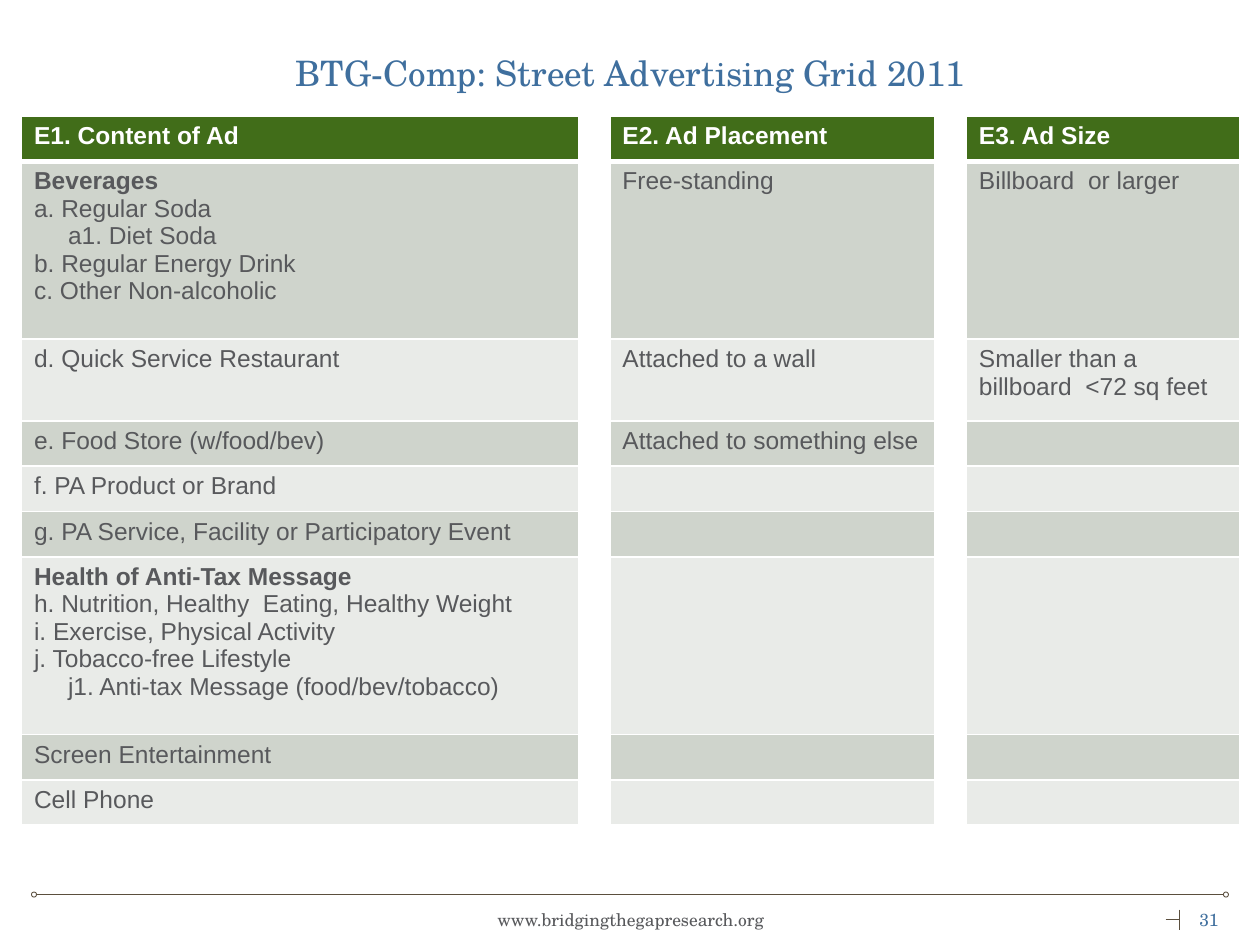
from lxml import etree
from pptx import Presentation, util as u
from pptx.dml.color import RGBColor
from pptx.enum import shapes, text
from pptx.oxml.ns import qn

SERIF, SANS = "TeX Gyre Schola", "Arial"
BLUE, GREY, BROWN, WHITE = "3F6F9E", "58595C", "5B4F3E", "FFFFFF"
HEADER_FILL, BANDS = "416D19", ("CFD4CC", "E9EBE8")
BOLD, INDENT = "bold", "indent"

TITLE = "BTG-Comp: Street Advertising Grid 2011"
SITE, PAGE = "www.bridgingthegapresearch.org", "31"

# Each column: width and its cells from the top; a cell is a list of lines,
# and a line is plain text or (text, style).
COLUMNS = [
    (4.42, [
        ["E1. Content of Ad"],
        [("Beverages", BOLD), "a. Regular Soda", ("a1. Diet Soda", INDENT),
         "b. Regular Energy Drink", "c. Other Non-alcoholic"],
        ["d. Quick Service Restaurant"],
        ["e. Food Store (w/food/bev)"],
        ["f. PA Product or Brand"],
        ["g. PA Service, Facility or Participatory Event"],
        [("Health of Anti-Tax Message", BOLD),
         "h. Nutrition, Healthy  Eating, Healthy Weight",
         "i. Exercise, Physical Activity", "j. Tobacco-free Lifestyle",
         ("j1. Anti-tax Message (food/bev/tobacco)", INDENT)],
        ["Screen Entertainment"],
        ["Cell Phone"],
    ]),
    (0.25, []),
    (2.58, [["E2. Ad Placement"], ["Free-standing"], ["Attached to a wall"],
            ["Attached to something else"]]),
    (0.25, []),
    (2.17, [["E3. Ad Size"], ["Billboard  or larger"],
            ["Smaller than a billboard  <72 sq feet"]]),
]
LINE_ROW, LIST_ROW, TWO_LINE_ROW = 0.36, 1.41, 0.65
ROWS = [LINE_ROW, LIST_ROW, TWO_LINE_ROW, *[LINE_ROW] * 3, LIST_ROW, *[LINE_ROW] * 2]
GRID_LEFT, GRID_TOP = 0.17, 0.92

RULE_Y, RULE_ENDS, DOT = 7.1, (0.29, 9.71), 0.04
TICK_X, TICK_Y = 9.36, 7.3


def rgb(value):
    return RGBColor.from_string(value)


def write(paragraph, content, size=10, font=SERIF, color=GREY, bold=False, align=None):
    run = paragraph.add_run()
    run.text = content
    run.font.size, run.font.name, run.font.bold = u.Pt(size), font, bold
    run.font.color.rgb = rgb(color)
    if align is not None:
        paragraph.alignment = align


def add_label(slide, box, content, **style):
    frame = slide.shapes.add_textbox(*map(u.Inches, box)).text_frame
    frame.word_wrap = True
    frame.vertical_anchor = text.MSO_ANCHOR.MIDDLE
    write(frame.paragraphs[0], content, **style)


def add_rule(slide, *ends):
    rule = slide.shapes.add_connector(shapes.MSO_CONNECTOR.STRAIGHT, *map(u.Inches, ends))
    rule.line.color.rgb = rgb(BROWN)
    rule.line.width = u.Pt(0.5)
    etree.SubElement(rule._element.spPr, qn("a:effectLst"))


def add_dot(slide, left):
    dot = slide.shapes.add_shape(
        shapes.MSO_SHAPE.OVAL, u.Inches(left), u.Inches(RULE_Y - DOT / 2),
        u.Inches(DOT), u.Inches(DOT))
    dot.shadow.inherit = False
    dot.fill.background()
    dot.line.color.rgb = rgb(BROWN)
    dot.line.width = u.Pt(0.5)


def set_borders(cell, **widths):
    """Draw white borders; widths are points by side: L, R, T, B."""
    properties = cell._tc.get_or_add_tcPr()
    for position, side in enumerate("LRTB"):
        border = etree.Element(qn(f"a:ln{side}"), w=str(u.Pt(widths.get(side, 1))))
        fill = etree.SubElement(border, qn("a:solidFill"))
        etree.SubElement(fill, qn("a:srgbClr"), val=WHITE)
        properties.insert(position, border)


def fill_cell(cell, lines, header):
    frame = cell.text_frame
    for index, line in enumerate(lines):
        content, style = line if isinstance(line, tuple) else (line, None)
        paragraph = frame.add_paragraph() if index else frame.paragraphs[0]
        if style == INDENT:
            paragraph._p.get_or_add_pPr().set("marL", str(u.Inches(0.27)))
        write(paragraph, content, size=14, font=SANS,
              color=WHITE if header else GREY, bold=header or style == BOLD)
    if not lines:  # keeps an empty cell from stretching its row
        etree.SubElement(frame.paragraphs[0]._p, qn("a:endParaRPr"), sz="1400")


def add_grid(slide):
    widths = [width for width, _ in COLUMNS]
    grid = slide.shapes.add_table(
        len(ROWS), len(COLUMNS), u.Inches(GRID_LEFT), u.Inches(GRID_TOP),
        u.Inches(sum(widths)), u.Inches(sum(ROWS))).table
    for row, height in zip(grid.rows, ROWS):
        row.height = u.Inches(height)
    for c, (width, entries) in enumerate(COLUMNS):
        grid.columns[c].width = u.Inches(width)
        for r in range(len(ROWS)):
            cell = grid.cell(r, c)
            fill_cell(cell, entries[r] if r < len(entries) else [], header=r == 0)
            if entries:
                cell.fill.solid()
                cell.fill.fore_color.rgb = rgb(BANDS[(r - 1) % 2] if r else HEADER_FILL)
            else:
                cell.fill.background()
            set_borders(cell, T=3 if r == 1 else 1, B=3 if r == 0 else 1)


def add_title(slide):
    title = slide.shapes.title
    title.left, title.top, title.width, title.height = map(u.Inches, (1.42, 0, 7.17, 0.74))
    frame = title.text_frame
    frame.margin_left = frame.margin_right = frame.margin_top = frame.margin_bottom = 0
    frame.vertical_anchor = text.MSO_ANCHOR.BOTTOM
    write(frame.paragraphs[0], TITLE, size=20, color=BLUE, align=text.PP_ALIGN.CENTER)


def add_footer(slide):
    start, end = RULE_ENDS
    add_label(slide, (9.42, 7.1, 0.5, 0.4), PAGE, color=BLUE)
    add_dot(slide, start - DOT)
    add_rule(slide, start, RULE_Y, end, RULE_Y)
    add_dot(slide, end)
    add_rule(slide, TICK_X, TICK_Y - 0.08, TICK_X, TICK_Y + 0.08)
    add_rule(slide, TICK_X - 0.11, TICK_Y, TICK_X, TICK_Y)
    add_label(slide, (3.42, 7.1, 3.17, 0.4), SITE, align=text.PP_ALIGN.CENTER)


def main():
    deck = Presentation()
    deck.slide_width, deck.slide_height = u.Inches(10), u.Inches(7.5)
    slide = deck.slides.add_slide(deck.slide_layouts[5])
    add_footer(slide)
    add_title(slide)
    add_grid(slide)
    deck.save("out.pptx")


if __name__ == "__main__":
    main()
